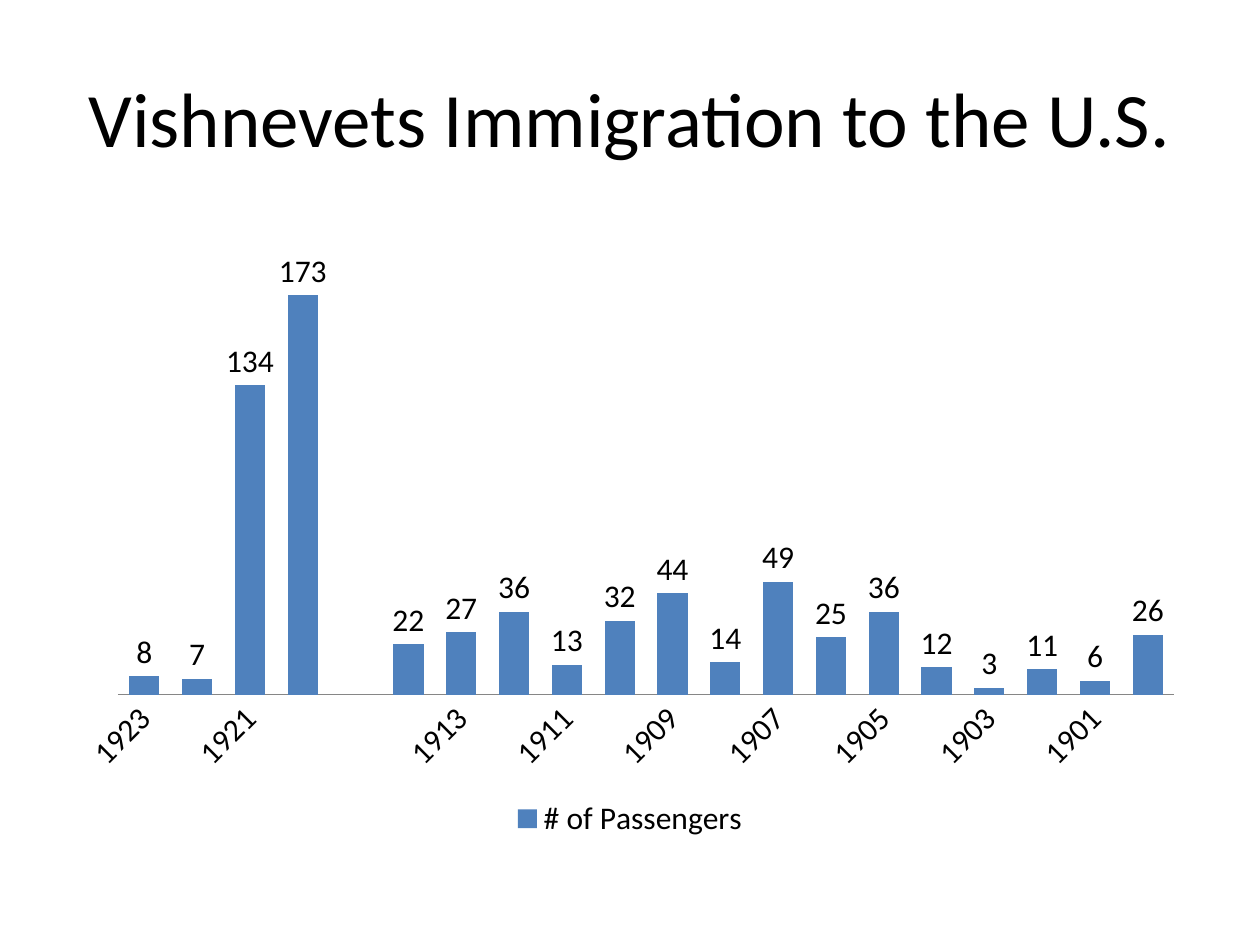
from dataclasses import dataclass
from typing import Optional

from pptx import Presentation
from pptx.chart.data import CategoryChartData
from pptx.dml.color import RGBColor
from pptx.enum.chart import XL_CHART_TYPE, XL_LABEL_POSITION, XL_LEGEND_POSITION, XL_TICK_MARK
from pptx.enum.text import MSO_ANCHOR, PP_ALIGN
from pptx.util import Pt

FONT = "Calibri"
BLACK = "000000"
BLUE = "4F81BD"
GREY = "868686"


@dataclass
class Box:
    left: float
    top: float
    width: float
    height: float

    def lengths(self) -> tuple:
        return Pt(self.left), Pt(self.top), Pt(self.width), Pt(self.height)


@dataclass
class Year:
    label: str
    passengers: Optional[int]


POSTWAR = [8, 7, 134, 173]
PREWAR = [22, 27, 36, 13, 32, 44, 14, 49, 25, 36, 12, 3, 11, 6, 26]
YEARS = (
    [Year(str(1923 - i), n) for i, n in enumerate(POSTWAR)]
    + [Year("", None)]
    + [Year(str(1914 - i), n) for i, n in enumerate(PREWAR)]
)


def rgb(value: str) -> RGBColor:
    return RGBColor.from_string(value)


def style_font(font, size: float) -> None:
    font.name = FONT
    font.size = Pt(size)
    font.color.rgb = rgb(BLACK)


def add_title(slide, box: Box, text: str) -> None:
    sp = slide.shapes.title
    sp.left, sp.top, sp.width, sp.height = box.lengths()
    tf = sp.text_frame
    tf.vertical_anchor = MSO_ANCHOR.MIDDLE
    p = tf.paragraphs[0]
    p.alignment = PP_ALIGN.CENTER
    r = p.add_run()
    r.text = text
    style_font(r.font, 44)


def add_passenger_chart(slide, box: Box, years: list[Year]) -> None:
    data = CategoryChartData()
    data.categories = [y.label for y in years]
    data.add_series("# of Passengers", [y.passengers for y in years])
    chart = slide.shapes.add_chart(
        XL_CHART_TYPE.COLUMN_CLUSTERED, *box.lengths(), data
    ).chart
    style_font(chart.font, 18)
    chart.has_title = False
    chart.has_legend = True
    chart.legend.position = XL_LEGEND_POSITION.BOTTOM
    chart.legend.include_in_layout = False

    chart.value_axis.visible = False
    chart.value_axis.has_major_gridlines = False
    axis = chart.category_axis
    axis.major_tick_mark = XL_TICK_MARK.NONE
    axis.minor_tick_mark = XL_TICK_MARK.NONE
    axis.format.line.color.rgb = rgb(GREY)
    axis.format.line.width = Pt(0.75)

    plot = chart.plots[0]
    plot.gap_width = 75
    plot.vary_by_categories = False
    plot.has_data_labels = True
    labels = plot.data_labels
    labels.show_value = True
    labels.position = XL_LABEL_POSITION.OUTSIDE_END
    style_font(labels.font, 18)
    fill = plot.series[0].format.fill
    fill.solid()
    fill.fore_color.rgb = rgb(BLUE)


def main() -> None:
    prs = Presentation()
    prs.slide_width, prs.slide_height = Pt(720), Pt(540)
    s = prs.slides.add_slide(prs.slide_layouts[5])
    add_title(s, Box(36, 21.6, 648, 90), "Vishnevets Immigration to the U.S.")
    add_passenger_chart(s, Box(36, 126, 648, 356.4), YEARS)
    prs.save("out.pptx")


if __name__ == "__main__":
    main()
